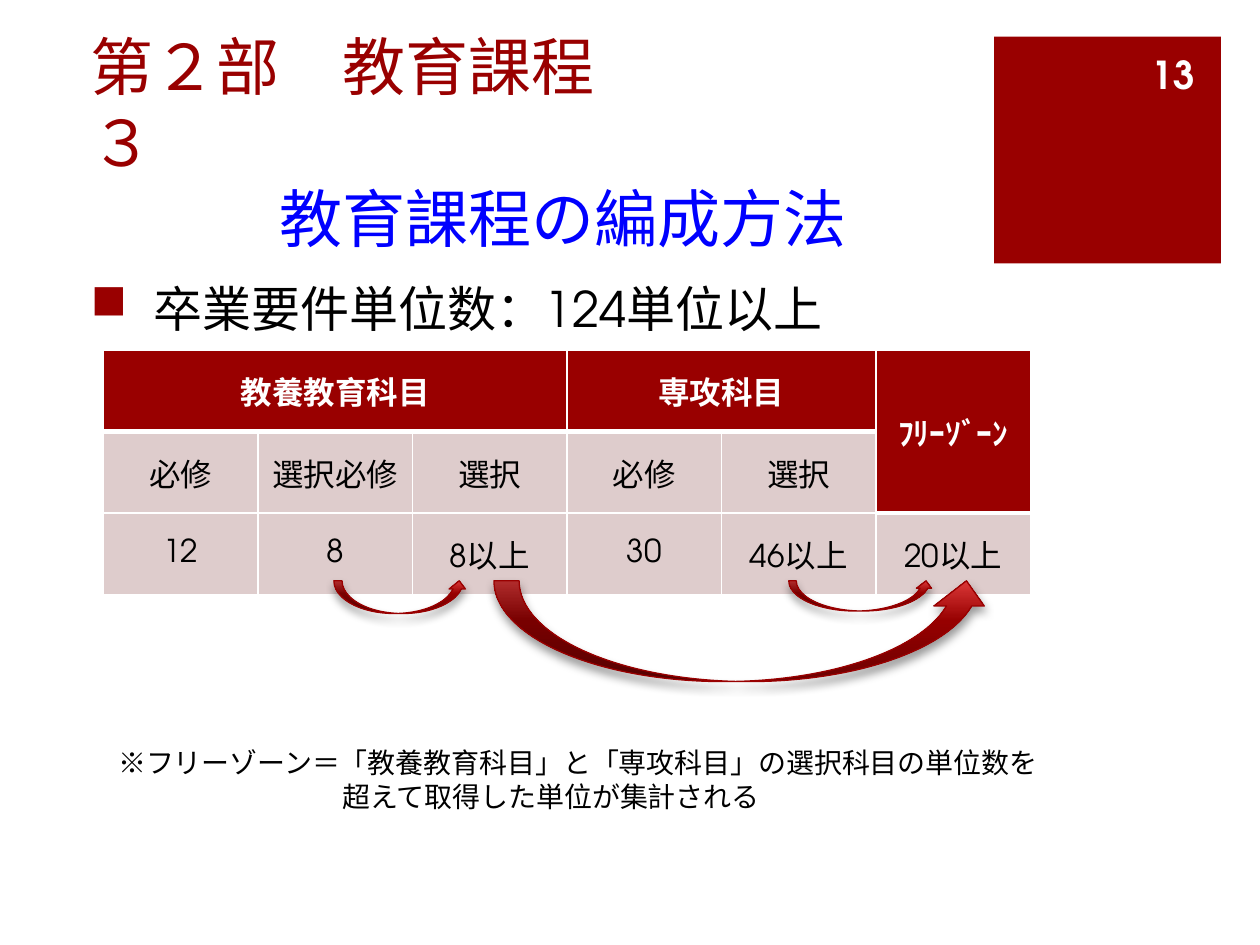
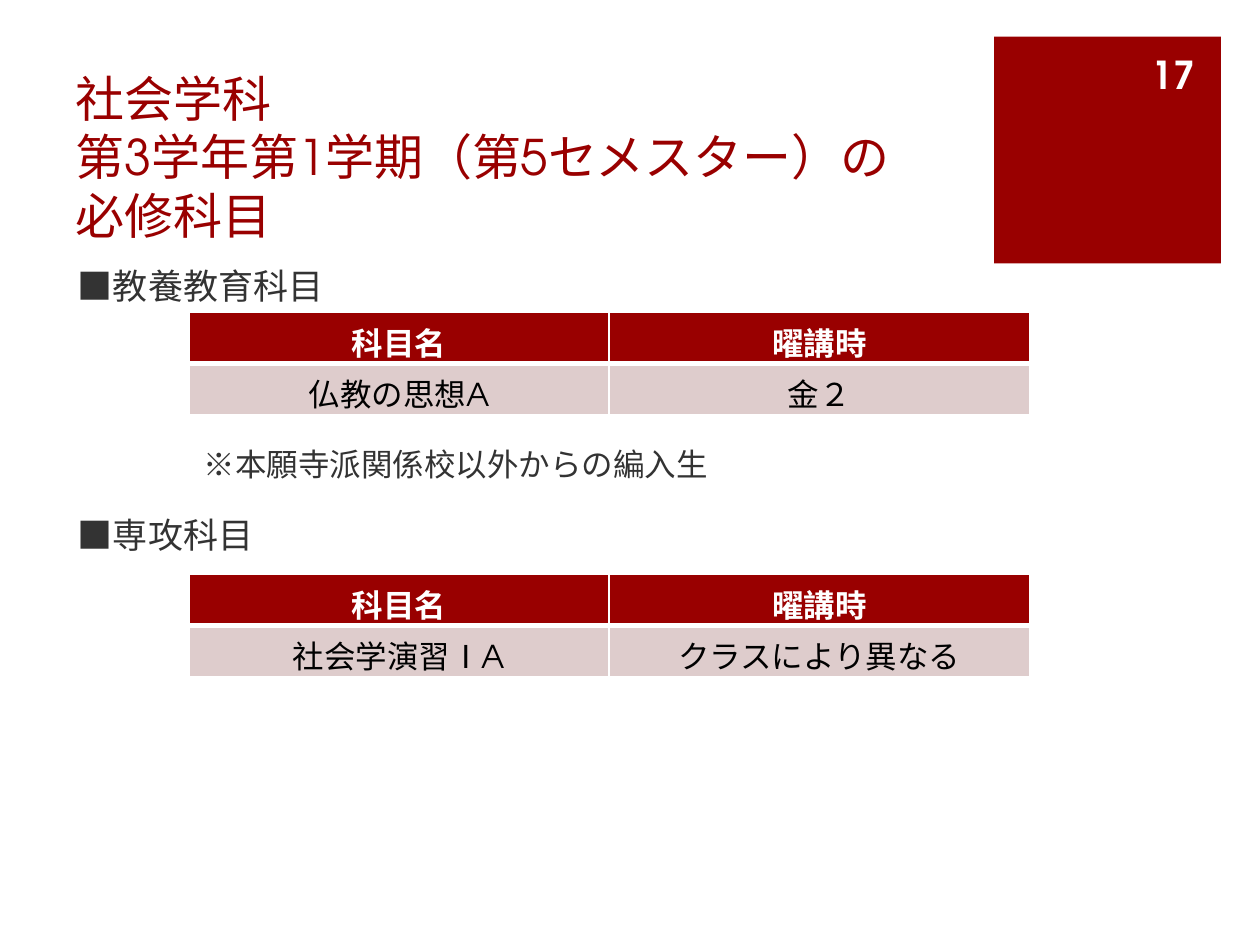
from dataclasses import dataclass

from lxml.etree import SubElement
from pptx import Presentation
from pptx.dml.color import RGBColor
from pptx.enum.shapes import MSO_SHAPE
from pptx.enum.text import MSO_ANCHOR, PP_ALIGN
from pptx.oxml import parse_xml
from pptx.oxml.ns import nsdecls, qn
from pptx.slide import Slide
from pptx.util import Emu, Inches, Pt

# Shared style
COLORS = {
    "brand": "990000",
    "accent": "0000FF",
    "ink": "000000",
    "soft_ink": "333333",
    "paper": "FFFFFF",
    "cell": "DECCCC",
    "arrow_dark": "6C0000",
    "arrow_mid": "960000",
    "arrow_light": "DC3838",
}
FONT = "TeX Gyre Adventor"
LEADING = 1.2
HEADER_RULE, CELL_RULE = 3, 1

# The slide is a grid of 100 columns by 75 rows
COLUMNS, ROWS = 100, 75
UNIT = Inches(10) // COLUMNS


def grid(count: float) -> Emu:
    return Emu(round(count * UNIT))


def rgb(name: str) -> RGBColor:
    return RGBColor.from_string(COLORS[name])


@dataclass(frozen=True)
class Area:
    left: float
    top: float
    width: float
    height: float

    def lengths(self) -> tuple[Emu, Emu, Emu, Emu]:
        return grid(self.left), grid(self.top), grid(self.width), grid(self.height)


@dataclass(frozen=True)
class Line:
    text: str
    size: float
    color: str = "ink"
    bold: bool = False
    align: PP_ALIGN = PP_ALIGN.LEFT
    indent: float = 0
    bullet: str = ""


@dataclass(frozen=True)
class TextBlock:
    area: Area
    lines: tuple[Line, ...]
    anchor: MSO_ANCHOR = MSO_ANCHOR.TOP


@dataclass(frozen=True)
class CourseTable:
    area: Area
    rows: tuple[tuple[str, ...], ...]
    header_depths: tuple[int, ...]
    merges: tuple[tuple[int, int, int, int], ...] = ()
    anchor: MSO_ANCHOR = MSO_ANCHOR.TOP


# Text
def write_line(para, line: Line) -> None:
    para.text = line.text
    para.alignment = line.align
    for span in para.runs:
        font = span.font
        font.name, font.size, font.bold = FONT, Pt(line.size), line.bold
        font.color.rgb = rgb(line.color)


def indent_line(para, line: Line) -> None:
    properties = para._p.get_or_add_pPr()
    properties.set("marL", str(grid(line.indent)))
    if line.bullet:
        properties.set("indent", str(-grid(line.indent)))
        color = SubElement(properties, qn("a:buClr"))
        SubElement(color, qn("a:srgbClr")).set("val", COLORS["brand"])
        SubElement(properties, qn("a:buChar")).set("char", line.bullet)


def draw_text(page: Slide, block: TextBlock) -> None:
    box = page.shapes.add_textbox(*block.area.lengths())
    frame = box.text_frame
    frame.word_wrap = True
    frame.vertical_anchor = block.anchor
    for index, line in enumerate(block.lines):
        para = frame.add_paragraph() if index else frame.paragraphs[0]
        write_line(para, line)
        para.line_spacing = Pt(line.size * LEADING)
        if line.indent:
            indent_line(para, line)


# Tables
def rule_cell(cell, top: float, bottom: float) -> None:
    properties = cell._tc.get_or_add_tcPr()
    for side, width in (("L", CELL_RULE), ("R", CELL_RULE), ("T", top), ("B", bottom)):
        properties.append(parse_xml(
            f'<a:ln{side} {nsdecls("a")} w="{Pt(width)}"><a:solidFill>'
            f'<a:srgbClr val="{COLORS["paper"]}"/></a:solidFill></a:ln{side}>'))


def draw_table(page: Slide, plan: CourseTable) -> None:
    row_count, column_count = len(plan.rows), len(plan.header_depths)
    table = page.shapes.add_table(row_count, column_count, *plan.area.lengths()).table
    for column in table.columns:
        column.width = grid(plan.area.width / column_count)
    for row in table.rows:
        row.height = grid(plan.area.height / row_count)
    for r, texts in enumerate(plan.rows):
        for c, (text, depth) in enumerate(zip(texts, plan.header_depths)):
            cell = table.cell(r, c)
            is_header = r < depth
            rule_cell(cell,
                      top=HEADER_RULE if r == depth else CELL_RULE,
                      bottom=HEADER_RULE if r == depth - 1 else CELL_RULE)
            cell.fill.solid()
            cell.fill.fore_color.rgb = rgb("brand" if is_header else "cell")
            cell.vertical_anchor = plan.anchor
            write_line(cell.text_frame.paragraphs[0],
                       Line(text, 18, "paper" if is_header else "ink", is_header, PP_ALIGN.CENTER))
    for top, left, bottom, right in plan.merges:
        table.cell(top, left).merge(table.cell(bottom, right))


# Shapes
def draw_arrow(page: Slide, area: Area) -> None:
    arrow = page.shapes.add_shape(MSO_SHAPE.CURVED_UP_ARROW, *area.lengths())
    arrow.line.color.rgb = rgb("brand")
    arrow.line.width = Pt(0.75)
    arrow.fill.solid()
    arrow.shadow.inherit = False
    properties = arrow._element.spPr
    stops = "".join(
        f'<a:gs pos="{share * 1000}"><a:srgbClr val="{COLORS[name]}"/></a:gs>'
        for share, name in ((0, "arrow_dark"), (60, "arrow_mid"), (100, "arrow_light")))
    properties.replace(properties.find(qn("a:solidFill")), parse_xml(
        f'<a:gradFill {nsdecls("a")} rotWithShape="1"><a:gsLst>{stops}</a:gsLst>'
        f'<a:lin ang="{270 * 60000}" scaled="0"/></a:gradFill>'))
    properties.find(qn("a:effectLst")).append(parse_xml(
        f'<a:outerShdw {nsdecls("a")} blurRad="{Pt(5.2)}" dist="{Pt(3)}" dir="{90 * 60000}" '
        f'rotWithShape="0"><a:srgbClr val="{COLORS["ink"]}"><a:alpha val="40000"/>'
        f'</a:srgbClr></a:outerShdw>'))


def add_page(deck, number: int) -> Slide:
    """Add a page with the corner square and its number."""
    page = deck.slides.add_slide(deck.slide_layouts[6])
    square = page.shapes.add_shape(MSO_SHAPE.RECTANGLE, *Area(78.9, 2.9, 18, 18).lengths())
    square.fill.solid()
    square.fill.fore_color.rgb = rgb("brand")
    square.line.fill.background()
    square.shadow.inherit = False
    draw_text(page, TextBlock(
        Area(88.3, 3.9, 7.5, 4),
        (Line(str(number), 22, "paper", True, PP_ALIGN.RIGHT),), MSO_ANCHOR.MIDDLE))
    return page


# Page contents
CREDIT_TEXTS = (
    TextBlock(Area(6.2, 6.2, 72.5, 14.5), (
        Line("第２部　教育課程", 36, "brand"),
        Line("３", 36, "brand"),
        Line("教育課程の編成方法", 36, "accent", indent=15),
    ), MSO_ANCHOR.BOTTOM),
    TextBlock(Area(6.2, 21.6, 81.2, 5.6), (
        Line("卒業要件単位数：124単位以上", 28, indent=5, bullet="■"),
    )),
    TextBlock(Area(8.4, 58.7, 79, 6.4), (
        Line("※フリーゾーン＝「教養教育科目」と「専攻科目」の選択科目の単位数を", 16),
        Line("超えて取得した単位が集計される", 16, indent=17.8),
    )),
)
CREDIT_TABLE = CourseTable(
    Area(8.2, 27.8, 73.6, 19.4),
    (
        ("教養教育科目", "", "", "専攻科目", "", "ﾌﾘｰｿﾞｰﾝ"),
        ("必修", "選択必修", "選択", "必修", "選択", ""),
        ("12", "8", "8以上", "30", "46以上", "20以上"),
    ),
    header_depths=(1, 1, 1, 1, 1, 2),
    merges=((0, 0, 0, 2), (0, 3, 0, 4), (0, 5, 1, 5)),
    anchor=MSO_ANCHOR.MIDDLE,
)
CREDIT_ARROWS = (
    Area(26.5, 46.1, 10.6, 2.6),
    Area(39.2, 46.1, 39.5, 8),
    Area(62.6, 46.1, 11.5, 2.4),
)

REQUIRED_TEXTS = (
    TextBlock(Area(5, 5.2, 69.8, 14.7), (
        Line("社会学科", 28, "brand"),
        Line("第3学年第1学期（第5セメスター）の必修科目", 28, "brand"),
    ), MSO_ANCHOR.BOTTOM),
    TextBlock(Area(5.2, 20.5, 71.2, 4.4), (Line("■教養教育科目", 20, "soft_ink"),)),
    TextBlock(Area(15.2, 34.8, 61.2, 4), (Line("※本願寺派関係校以外からの編入生", 18, "soft_ink"),)),
    TextBlock(Area(5.2, 40.3, 71.2, 4.4), (Line("■専攻科目", 20, "soft_ink"),)),
)
REQUIRED_COURSES = (
    (24.8, ("仏教の思想A", "金２")),
    (45.6, ("社会学演習ⅠA", "クラスにより異なる")),
)


def main() -> None:
    deck = Presentation()
    deck.slide_width, deck.slide_height = grid(COLUMNS), grid(ROWS)

    # Credits needed to graduate
    page = add_page(deck, 13)
    for block in CREDIT_TEXTS:
        draw_text(page, block)
    draw_table(page, CREDIT_TABLE)
    for area in CREDIT_ARROWS:
        draw_arrow(page, area)

    # Required courses of the fifth semester
    page = add_page(deck, 17)
    for block in REQUIRED_TEXTS:
        draw_text(page, block)
    for top, course in REQUIRED_COURSES:
        draw_table(page, CourseTable(
            Area(15, top, 66.7, 8.1), (("科目名", "曜講時"), course), header_depths=(1, 1)))

    deck.save("out.pptx")


if __name__ == "__main__":
    main()
